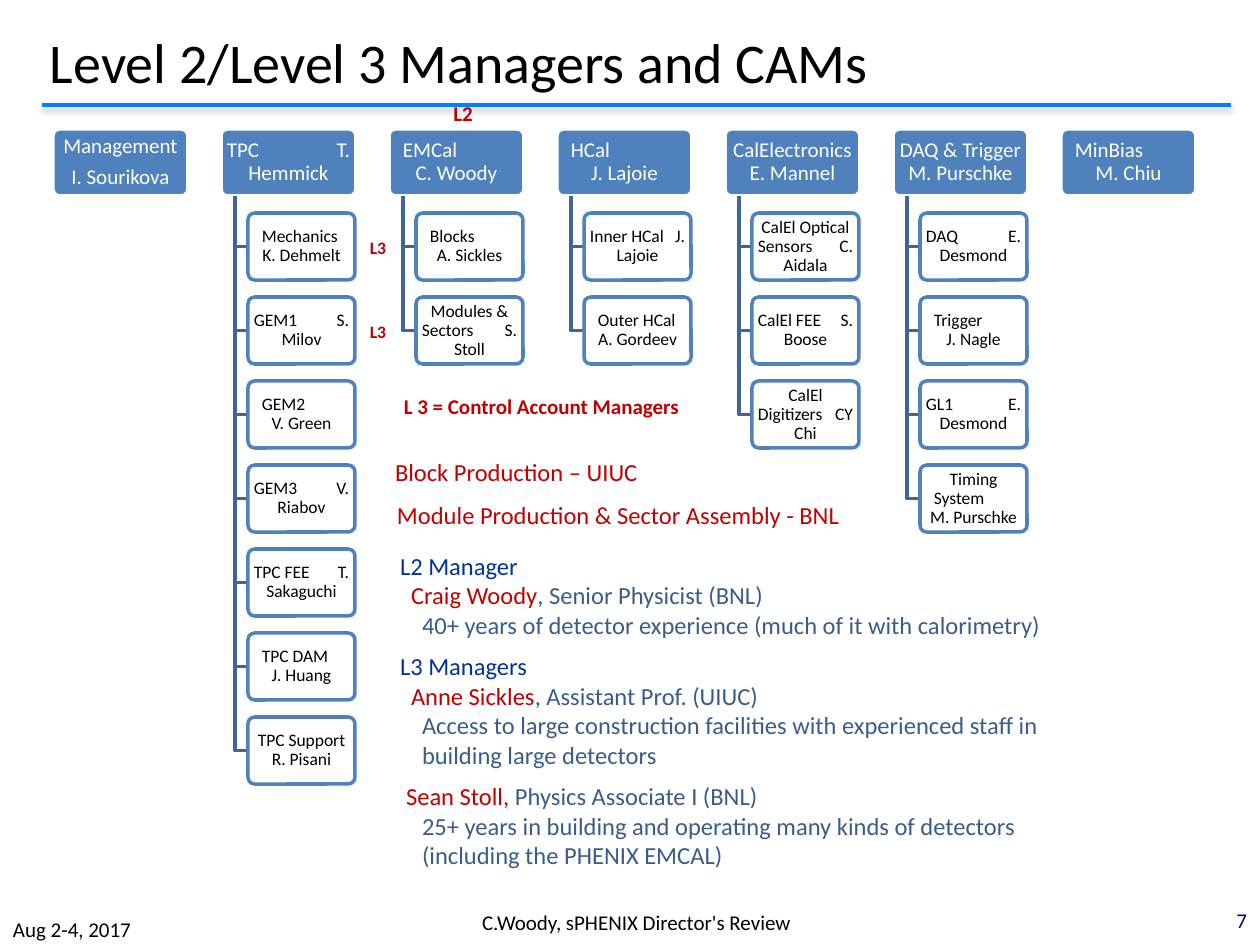
from lxml import etree
from pptx import Presentation
from pptx.dml.color import RGBColor
from pptx.enum.shapes import MSO_CONNECTOR, MSO_SHAPE
from pptx.enum.text import MSO_ANCHOR, PP_ALIGN
from pptx.oxml import parse_xml
from pptx.oxml.ns import nsdecls, qn
from pptx.util import Emu, Pt

COLORS = {"blue": "4F81BD", "spine": "3F6696", "rule": "0080FF", "white": "FFFFFF",
          "black": "000000", "red": "C00000", "navy": "003399", "steel": "385D8A",
          "number": "000080"}
FONT = "Calibri"
EMU_PER_PX = 914400 / 126

HEAD_X, HEAD_Y, HEAD_W, BOX_H, COLUMN_PITCH = 53, 129, 135, 67, 168
ITEM_Y, ITEM_W, ITEM_DX, ITEM_PITCH, SPINE_DX = 213, 107, 27, 84, 14
BOX_INSET, LEAD_INDENT = 4, 8

# A tab sends the rest of a line to the right edge; ">" sets a line to the left.
COLUMNS = [
    (["Management", "I. Sourikova"], []),
    (["TPC\tT.", "Hemmick"], [
        [">Mechanics", "K. Dehmelt"], ["GEM1\tS.", "Milov"], [">GEM2", "V. Green"],
        ["GEM3\tV.", "Riabov"], ["TPC FEE\tT.", "Sakaguchi"],
        [">TPC DAM", "J. Huang"], ["TPC Support", "R. Pisani"]]),
    ([">EMCal", "C. Woody"], [
        [">Blocks", "A. Sickles"], ["Modules &", "Sectors\tS.", "Stoll"]]),
    ([">HCal", "J. Lajoie"], [
        ["Inner HCal\tJ.", "Lajoie"], [">Outer HCal", "A. Gordeev"]]),
    (["CalElectronics", "E. Mannel"], [
        ["CalEl Optical", "Sensors\tC.", "Aidala"], ["CalEl FEE\tS.", "Boose"],
        ["CalEl", "Digitizers\tCY", "Chi"]]),
    (["DAQ & Trigger", "M. Purschke"], [
        ["DAQ\tE.", "Desmond"], [">Trigger", "J. Nagle"], ["GL1\tE.", "Desmond"],
        ["Timing", ">System", "M. Purschke"]]),
    ([">MinBias", "M. Chiu"], []),
]

LABELS = [
    ("L2", (421, 95, 84, 37), 12),
    ("L3", (336, 231, 84, 32), 10),
    ("L3", (336, 315, 84, 32), 10),
    ("L 3 = Control Account Managers", (388, 388, 307, 62), 12),
]

PRODUCTION = [
    ("Block Production – UIUC", (389, 451, 436, 40)),
    ("Module Production & Sector Assembly - BNL", (391, 494, 576, 40)),
]

MANAGERS = [
    (0, 0, [("L2 Manager", "navy")]),
    (11, 0, [("Craig Woody", "red"), (", Senior Physicist (BNL)", "steel")]),
    (22, 0, [("40+ years of detector experience (much of it with calorimetry)", "steel")]),
    (0, 7, [("L3 Managers", "navy")]),
    (11, 0, [("Anne Sickles", "red"), (", Assistant Prof. (UIUC)", "steel")]),
    (22, 0, [("Access to large construction facilities with experienced staff in", "steel")]),
    (22, 0, [("building large detectors", "steel")]),
    (6, 7, [("Sean Stoll, ", "red"), ("Physics Associate I (BNL)", "steel")]),
    (22, 0, [("25+ years in building and operating many kinds of detectors", "steel")]),
    (22, 0, [("(including the PHENIX EMCAL)", "steel")]),
]


def px(value):
    return Emu(round(value * EMU_PER_PX))


def rgb(name):
    return RGBColor.from_string(COLORS[name])


def set_attrs(obj, values):
    for name, value in values.items():
        setattr(obj, name, value)


def set_frame(tf, inset_x, inset_y, anchor):
    set_attrs(tf, {"word_wrap": True, "vertical_anchor": anchor,
                   "margin_left": px(inset_x), "margin_right": px(inset_x),
                   "margin_top": px(inset_y), "margin_bottom": px(inset_y)})


def add_run(p, text, size, color, bold=False):
    r = p.add_run()
    r.text = text
    set_attrs(r.font, {"name": FONT, "size": Pt(size), "bold": bold})
    r.font.color.rgb = rgb(color)


def next_paragraph(tf, index):
    return tf.add_paragraph() if index else tf.paragraphs[0]


def add_text(s, box, paragraphs, size, align=PP_ALIGN.LEFT, anchor=MSO_ANCHOR.TOP,
             inset=(6, 6), bold=False):
    tf = s.shapes.add_textbox(*map(px, box)).text_frame
    set_frame(tf, *inset, anchor)
    for i, (indent, before, runs) in enumerate(paragraphs):
        p = next_paragraph(tf, i)
        p._p.get_or_add_pPr().set("marL", str(px(indent)))
        set_attrs(p, {"alignment": align, "space_before": Pt(before)})
        for text, color in runs:
            add_run(p, text, size, color, bold)


def add_line_text(s, box, text, size, color, **options):
    add_text(s, box, [(0, 0, [(text, color)])], size, **options)


def add_box(s, x, y, w, lines, size, fill, line, color, gap=0):
    sp = s.shapes.add_shape(MSO_SHAPE.ROUNDED_RECTANGLE, *map(px, (x, y, w, BOX_H)))
    sp.adjustments[0] = 0.1
    sp.shadow.inherit = False
    sp.fill.solid()
    sp.fill.fore_color.rgb = rgb(fill)
    sp.line.color.rgb = rgb(line)
    sp.line.width = Pt(2)
    tf = sp.text_frame
    set_frame(tf, BOX_INSET, 0, MSO_ANCHOR.MIDDLE)
    for i, text in enumerate(lines):
        p = next_paragraph(tf, i)
        pPr = p._p.get_or_add_pPr()
        if "\t" in text:
            tabs = etree.SubElement(pPr, qn("a:tabLst"))
            etree.SubElement(tabs, qn("a:tab"),
                             pos=str(px(w - 2 * BOX_INSET - 1)), algn="r")
        if text.startswith(">"):
            pPr.set("marL", str(px(LEAD_INDENT)))
        left = "\t" in text or text.startswith(">")
        set_attrs(p, {"alignment": PP_ALIGN.LEFT if left else PP_ALIGN.CENTER,
                      "line_spacing": 0.9, "space_before": Pt(gap if i else 0)})
        add_run(p, text.lstrip(">"), size, color)


def add_elbow(s, x, top, end_x, end_y):
    builder = s.shapes.build_freeform(px(x), px(top), scale=1.0)
    builder.add_line_segments([(px(x), px(end_y)), (px(end_x), px(end_y))], close=False)
    sp = builder.convert_to_shape()
    sp.shadow.inherit = False
    sp.fill.background()
    sp.line.color.rgb = rgb("spine")
    sp.line.width = Pt(2)


def add_column(s, x, head, items):
    gap = 5 if head[0] == "Management" else 0
    add_box(s, x, HEAD_Y, HEAD_W, head, 12, "blue", "white", "white", gap)
    for i, lines in enumerate(items):
        y = ITEM_Y + i * ITEM_PITCH
        add_elbow(s, x + SPINE_DX, HEAD_Y + BOX_H, x + ITEM_DX, y + BOX_H / 2)
        add_box(s, x + ITEM_DX, y, ITEM_W, lines, 10, "white", "blue", "black")


def add_rule(s):
    rule = s.shapes.add_connector(MSO_CONNECTOR.STRAIGHT, *map(px, (42, 105, 1231, 105)))
    rule.line.color.rgb = rgb("rule")
    rule.line.width = Pt(2.25)
    rule._element.spPr.append(parse_xml(
        f'<a:effectLst {nsdecls("a")}><a:outerShdw blurRad="39370" dist="20320" '
        'dir="5400000"><a:srgbClr val="808080"><a:alpha val="38000"/></a:srgbClr>'
        '</a:outerShdw></a:effectLst>'))


def main():
    prs = Presentation()
    set_attrs(prs, {"slide_width": px(1260), "slide_height": px(945)})
    s = prs.slides.add_slide(prs.slide_layouts[6])
    middle = {"anchor": MSO_ANCHOR.MIDDLE}
    add_rule(s)
    add_line_text(s, (0, 14, 1260, 94), "Level 2/Level 3 Managers and CAMs", 32, "black",
                  inset=(50, 6), **middle)
    footer = {"inset": (13, 0), **middle}
    add_line_text(s, (1187, 895, 73, 50), "7", 12, "number", align=PP_ALIGN.RIGHT, **footer)
    add_line_text(s, (0, 914, 294, 31), "Aug 2-4, 2017", 12, "black", **footer)
    add_line_text(s, (437, 903, 399, 38), "C.Woody, sPHENIX Director's Review", 12, "black",
                  align=PP_ALIGN.CENTER, **footer)
    for i, (head, items) in enumerate(COLUMNS):
        add_column(s, HEAD_X + i * COLUMN_PITCH, head, items)
    for text, box, size in LABELS:
        add_line_text(s, box, text, size, "red", align=PP_ALIGN.CENTER, bold=True)
    for text, box in PRODUCTION:
        add_line_text(s, box, text, 14, "red")
    add_text(s, (394, 545, 813, 318), MANAGERS, 14)
    prs.save("out.pptx")


if __name__ == "__main__":
    main()
